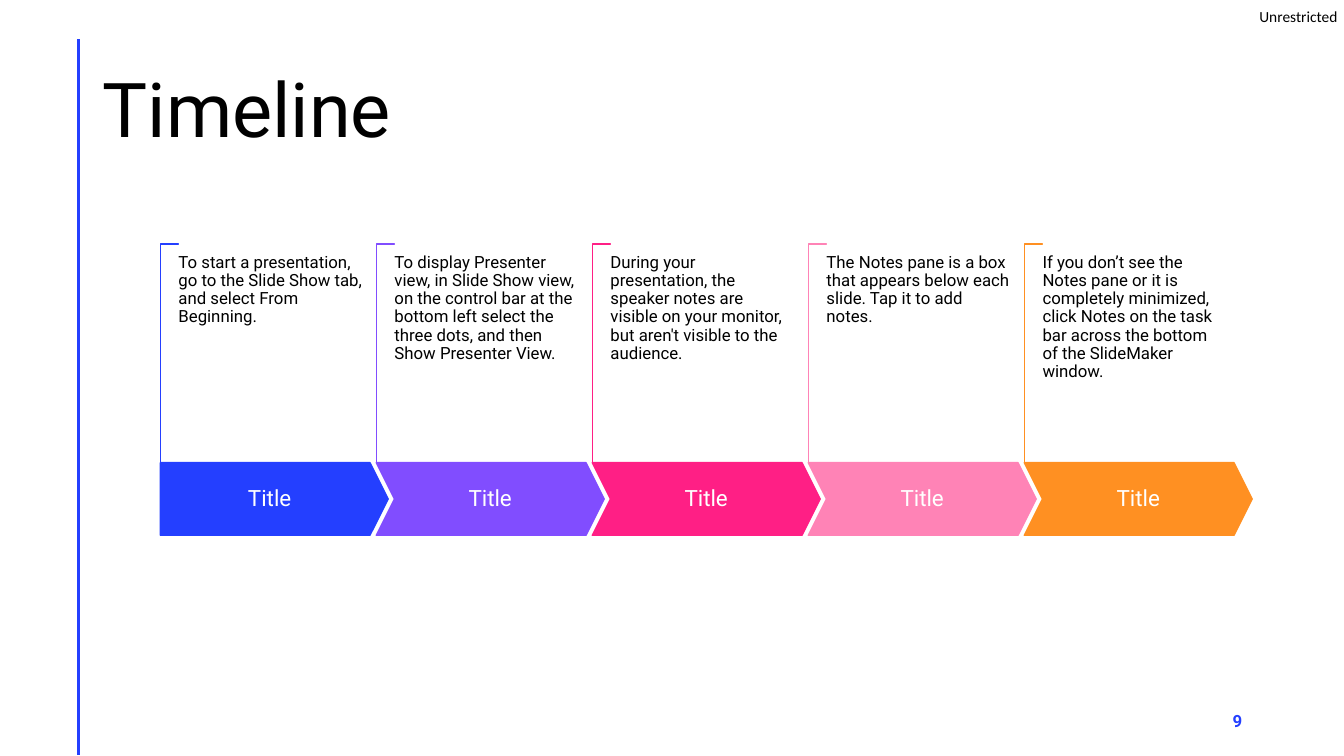
from lxml import etree
from pptx import Presentation
from pptx.dml.color import RGBColor
from pptx.enum.shapes import MSO_CONNECTOR, MSO_SHAPE
from pptx.enum.text import MSO_ANCHOR, PP_ALIGN
from pptx.oxml.ns import qn
from pptx.util import Inches, Pt

STRAIGHT = MSO_CONNECTOR.STRAIGHT
CORNER, PENTAGON, CHEVRON = MSO_SHAPE.CORNER, MSO_SHAPE.PENTAGON, MSO_SHAPE.CHEVRON
TOP, MIDDLE = MSO_ANCHOR.TOP, MSO_ANCHOR.MIDDLE
LEFT, CENTER, RIGHT = PP_ALIGN.LEFT, PP_ALIGN.CENTER, PP_ALIGN.RIGHT

LABEL = "Unrestricted"
HEADING = "Timeline"
PAGE_NUMBER = "9"
STEPS = [
    ("Title", "243FFF", "To start a presentation, go to the Slide Show tab, and select From Beginning."),
    ("Title", "814DFF", "To display Presenter view, in Slide Show view, on the control bar at the "
                        "bottom left select the three dots, and then Show Presenter View."),
    ("Title", "FF1F85", "During your presentation, the speaker notes are visible on your monitor, "
                        "but aren't visible to the audience."),
    ("Title", "FF83B6", "The Notes pane is a box that appears below each slide. Tap it to add notes."),
    ("Title", "FF9022", "If you don’t see the Notes pane or it is completely minimized, click Notes "
                        "on the task bar across the bottom of the SlideMaker window."),
]

THEME = {
    "font": "Roboto", "label_font": "Calibri",
    "ink": "000000", "paper": "FFFFFF", "accent": "243FFF",
    "heading": 54, "step": 16, "body": 12, "label": 11,
}

FIRST_LEFT, STEP_PITCH = 1.59, 2.1425
ARROW_TOP, ARROW_WIDTH, ARROW_HEIGHT, ARROW_POINT = 4.59, 2.26, 0.72, 0.25
BRACKET_LENGTH, BRACKET_DEPTH, BRACKET_THICKNESS = 2.17, 0.18, 0.01
NOTE_TOP, NOTE_WIDTH, NOTE_HEIGHT = 2.52, 1.83, 1.96


def color(name):
    return RGBColor.from_string(THEME.get(name, name))


def write(box, text, size, ink="ink", font="font", align=LEFT, anchor=TOP,
          insets=(0, 0), spacing=None, bold=False):
    frame = box.text_frame
    frame.word_wrap = True
    frame.vertical_anchor = anchor
    frame.margin_left = frame.margin_right = Inches(insets[0])
    frame.margin_top = frame.margin_bottom = Inches(insets[1])
    para = frame.paragraphs[0]
    para.alignment = align
    if spacing:
        para.line_spacing = spacing
    span = para.add_run()
    span.text = text
    span.font.name = THEME[font]
    span.font.size = Pt(THEME[size])
    span.font.color.rgb = color(ink)
    span.font.bold = bold


def add_text(page, place, text, size, **style):
    box = page.shapes.add_textbox(*map(Inches, place))
    write(box, text, size, **style)


def add_block(page, kind, place, fill, line, adjustments):
    shape = page.shapes.add_shape(kind, *map(Inches, place))
    shape.shadow.inherit = False
    shape.fill.solid()
    shape.fill.fore_color.rgb = color(fill)
    shape.line.color.rgb = color(line)
    shape.line.width = Pt(1)
    for index, value in enumerate(adjustments):
        shape.adjustments[index] = value
    return shape


def add_side_rule(page):
    rule = page.shapes.add_connector(STRAIGHT, *map(Inches, (0.78, 0.39, 0.78, 7.49)))
    rule.line.color.rgb = color("accent")
    rule.line.width = Pt(2)
    etree.SubElement(rule._element.spPr, qn("a:effectLst"))


def add_step(page, index, title, tint, note):
    left = FIRST_LEFT + index * STEP_PITCH
    bracket_left = left + (BRACKET_DEPTH - BRACKET_LENGTH) / 2
    bracket_top = ARROW_TOP - (BRACKET_LENGTH + BRACKET_DEPTH) / 2
    bracket = add_block(page, CORNER, (bracket_left, bracket_top, BRACKET_LENGTH, BRACKET_DEPTH),
                        "paper", tint, [BRACKET_THICKNESS, BRACKET_THICKNESS])
    bracket.rotation = 90
    arrow = add_block(page, CHEVRON if index else PENTAGON,
                      (left, ARROW_TOP, ARROW_WIDTH, ARROW_HEIGHT), tint, tint, [ARROW_POINT])
    write(arrow, title, "step", ink="paper", align=CENTER, anchor=MIDDLE,
          insets=(0.11, 0.22), spacing=0.9)
    add_text(page, (left + BRACKET_DEPTH, NOTE_TOP, NOTE_WIDTH, NOTE_HEIGHT),
             note, "body", spacing=0.9)


def main():
    deck = Presentation()
    deck.slide_width, deck.slide_height = Inches(13.33), Inches(7.5)
    page = deck.slides.add_slide(deck.slide_layouts[6])
    add_text(page, (12.49, 0.07, 0.81, 0.18), LABEL, "label", font="label_font")
    add_side_rule(page)
    add_text(page, (0.92, 0.4, 11.5, 1.45), HEADING, "heading",
             anchor=MIDDLE, insets=(0.1, 0.05), spacing=0.9)
    add_text(page, (9.42, 6.95, 3, 0.4), PAGE_NUMBER, "body", ink="accent",
             align=RIGHT, anchor=MIDDLE, insets=(0.1, 0.05), bold=True)
    for index, step in enumerate(STEPS):
        add_step(page, index, *step)
    deck.save("out.pptx")


if __name__ == "__main__":
    main()
